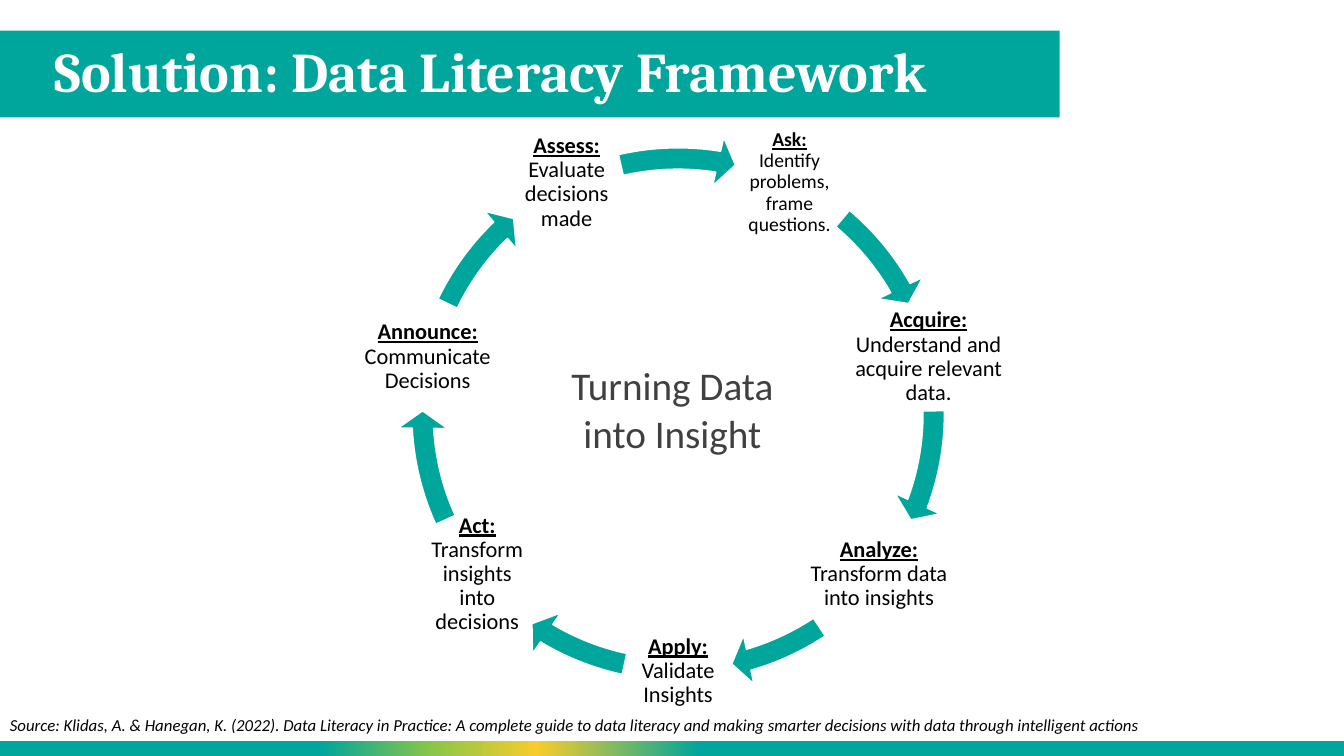
import math
from lxml import etree
from pptx import Presentation
from pptx import util as u
from pptx.dml.color import RGBColor
from pptx.enum import shapes, text
from pptx.oxml import ns

COLORS = {"teal": "00A69B", "yellow": "F8CC2B", "green": "87C54A",
          "white": "FFFFFF", "black": "000000", "gray": "404040"}


def add_shape(kind, left, top, width, height):
    sp = s.shapes.add_shape(kind, u.Pt(left), u.Pt(top), u.Pt(width), u.Pt(height))
    sp.shadow.inherit = False
    sp.fill.solid()
    sp.fill.fore_color.rgb = RGBColor.from_string(COLORS["teal"])
    sp.line.fill.background()
    return sp


def add_text(left, top, width, height, runs, size, color="black", font="Calibri",
             align=text.PP_ALIGN.LEFT, anchor=text.MSO_ANCHOR.TOP):
    tf = s.shapes.add_textbox(u.Pt(left), u.Pt(top), u.Pt(width), u.Pt(height)).text_frame
    tf.word_wrap = True
    tf.vertical_anchor = anchor
    p = tf.paragraphs[0]
    p.alignment = align
    for i, words in enumerate(runs):
        if i:
            p.add_line_break()
        p.add_run().text = words
    p.font.name = font
    p.font.size = u.Pt(size)
    p.font.color.rgb = RGBColor.from_string(COLORS[color])
    return tf


prs = Presentation()
prs.slide_width, prs.slide_height = u.Pt(960), u.Pt(540)
s = prs.slides.add_slide(prs.slide_layouts[6])

add_shape(shapes.MSO_SHAPE.RECTANGLE, -0.5, 21.8, 757.5, 62)

footer = add_shape(shapes.MSO_SHAPE.RECTANGLE, -0.5, 529.2, 960.5, 10.8)
footer.fill.gradient()
footer.fill.gradient_angle = 180
stops = footer.fill._fill._gradFill.find(ns.qn("a:gsLst"))
for stop in list(stops):
    stops.remove(stop)
for position, name in [(0, "teal"), (48, "teal"), (60, "yellow"),
                       (68, "green"), (76, "teal"), (100, "teal")]:
    stop = etree.SubElement(stops, ns.qn("a:gs"), pos=str(position * 1000))
    etree.SubElement(stop, ns.qn("a:srgbClr"), val=COLORS[name])

tf = add_text(31.7, 21.8, 724.3, 62, ["Solution: Data Literacy Framework"], 40,
              "white", "Cambria", anchor=text.MSO_ANCHOR.MIDDLE)
tf.paragraphs[0].font.bold = True
tf.paragraphs[0].line_spacing = 0.9

add_text(393.1, 254.9, 174.2, 74.2, ["Turning Data into Insight"], 28, "gray",
         align=text.PP_ALIGN.CENTER)

center_x, center_y, radius = 484.4, 295.8, 183.5
ring, label_height = 400.3, 77
steps = [
    ("Ask:", "Identify problems, frame questions.", 14, 77, 310.08, 330.47),
    ("Acquire:", "Understand and acquire relevant data.", 16, 108.7, 359.28, 20.52),
    ("Analyze:", "Transform data into insights", 16, 112.3, 56.46, 73.97),
    ("Apply:", "Validate Insights", 16, 77, 102.12, 120.97),
    ("Act:", "Transform insights into decisions", 16, 77, 155.57, 176.81),
    ("Announce:", "Communicate Decisions", 16, 126, 205.63, 226.01),
    ("Assess:", "Evaluate decisions made", 16, 77, 257.06, 279.03),
]
for i, (label, detail, size, width, start, end) in enumerate(steps):
    angle = math.radians(90 + (i - 3) * 360 / len(steps))
    x = center_x + radius * math.cos(angle)
    y = center_y + radius * math.sin(angle)
    tf = add_text(x - width / 2, y - label_height / 2, width, label_height,
                  [label, detail], size, align=text.PP_ALIGN.CENTER,
                  anchor=text.MSO_ANCHOR.MIDDLE)
    tf.margin_left = tf.margin_right = tf.margin_top = tf.margin_bottom = u.Pt(1.4)
    p = tf.paragraphs[0]
    p.line_spacing = 0.9
    p.runs[0].font.bold = True
    p.runs[0].font.underline = True

    arrow = add_shape(shapes.MSO_SHAPE.CIRCULAR_ARROW, center_x - ring / 2,
                      center_y - ring / 2, ring, ring)
    arrow.line.color.rgb = RGBColor.from_string(COLORS["white"])
    arrow.line.width = u.Pt(1)
    for k, value in enumerate([0.038, 3.91 * 0.6, end * 0.6, start * 0.6, 0.044]):
        arrow.adjustments[k] = value

tf = add_text(0, 506.9, 920.9, 21.8, [
    "Source: Klidas, A. & Hanegan, K. (2022). Data Literacy in Practice: A complete guide to "
    "data literacy and making smarter decisions with data through intelligent actions"], 12)
tf.auto_size = text.MSO_AUTO_SIZE.SHAPE_TO_FIT_TEXT
tf.paragraphs[0].font.italic = True

prs.save("out.pptx")
